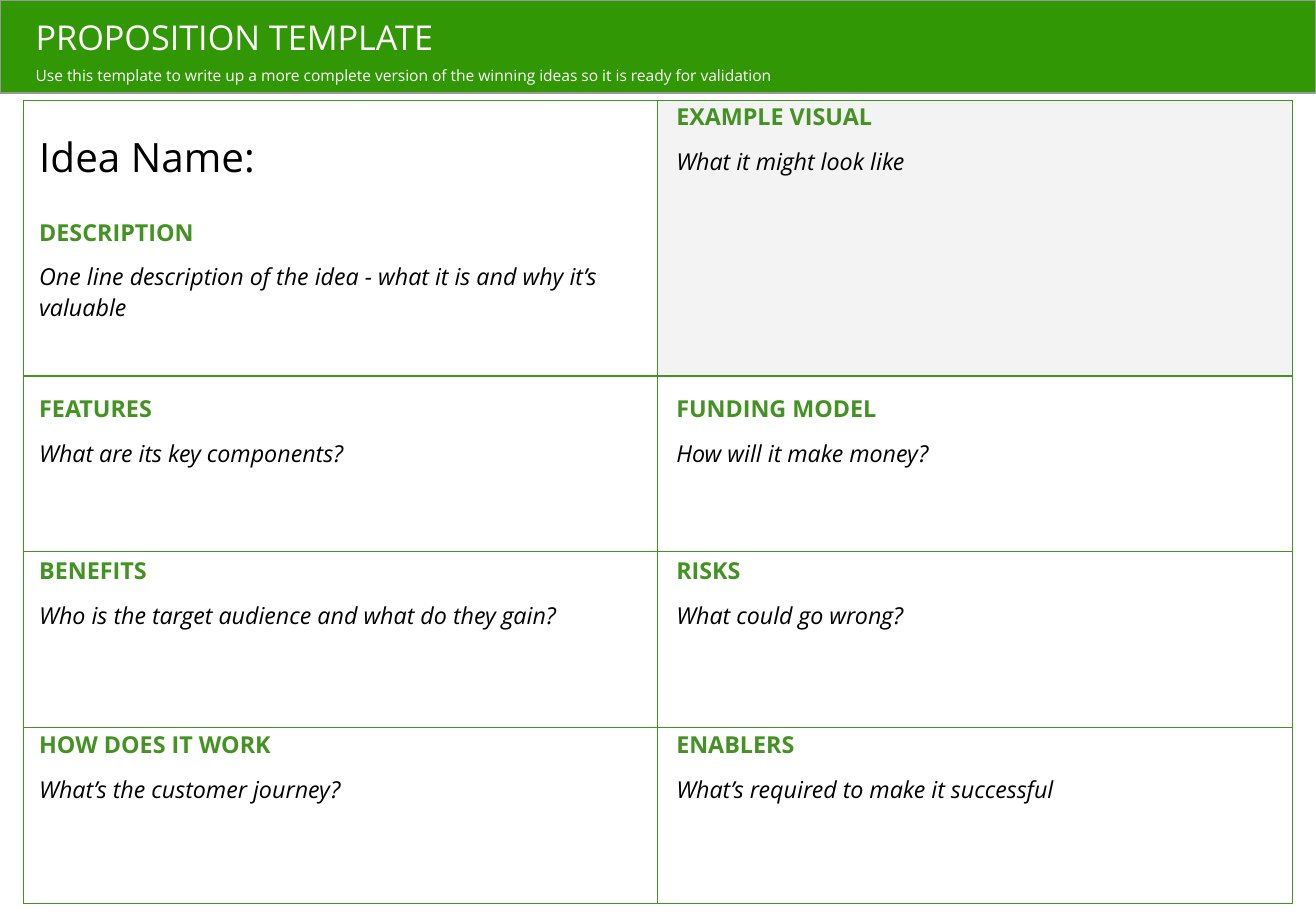
import pptx
import pptx.dml.color
import pptx.enum.shapes
import pptx.enum.text
import pptx.util
from pptx.util import Cm

GREEN, BANNER_GREEN = "449222", "319704"
BLACK, WHITE, PALE, GREY = "000000", "FFFFFF", "F3F3F3", "999999"


def rgb(hex_code):
    return pptx.dml.color.RGBColor.from_string(hex_code)


def write(paragraph, text, size=15, color=BLACK, bold=False, italic=False,
          spacing=1.1, before=0, after=0):
    """Put formatted text into a paragraph."""
    paragraph.alignment = pptx.enum.text.PP_ALIGN.LEFT
    paragraph.line_spacing = spacing
    paragraph.space_before = pptx.util.Pt(before)
    paragraph.space_after = pptx.util.Pt(after)
    run = paragraph.add_run()
    run.text = text
    run.font.name = "Open Sans"
    run.font.size = pptx.util.Pt(size)
    run.font.bold, run.font.italic = bold, italic
    run.font.color.rgb = rgb(color)


class PropositionSlide:
    def __init__(self, deck):
        self.slide = deck.slides.add_slide(deck.slide_layouts[5])

    def box(self, left, top, width, height, fill=None, line=GREEN):
        rect = self.slide.shapes.add_shape(
            pptx.enum.shapes.MSO_SHAPE.RECTANGLE,
            Cm(left), Cm(top), Cm(width), Cm(height))
        rect.shadow.inherit = False
        if fill:
            rect.fill.solid()
            rect.fill.fore_color.rgb = rgb(fill)
        else:
            rect.fill.background()
        rect.line.color.rgb = rgb(line)
        rect.line.width = pptx.util.Pt(0.75)

    def frame(self, holder, inset=0):
        frame = holder.text_frame
        frame.word_wrap = True
        frame.auto_size = pptx.enum.text.MSO_AUTO_SIZE.NONE
        frame.vertical_anchor = pptx.enum.text.MSO_ANCHOR.TOP
        frame.margin_left = frame.margin_right = Cm(inset)
        frame.margin_top = frame.margin_bottom = Cm(inset)
        return frame

    def text_box(self, left, top, width, height, inset=0):
        return self.frame(self.slide.shapes.add_textbox(
            Cm(left), Cm(top), Cm(width), Cm(height)), inset)

    def title(self, text, left, top, width, height):
        idea_name = self.slide.shapes.title
        idea_name.left, idea_name.top = Cm(left), Cm(top)
        idea_name.width, idea_name.height = Cm(width), Cm(height)
        write(self.frame(idea_name).paragraphs[0], text, size=26, spacing=0.9)

    def section(self, heading, prompt, left, top, width, height):
        section = self.text_box(left, top, width, height)
        write(section.paragraphs[0], heading, color=GREEN, bold=True, before=9)
        write(section.add_paragraph(), prompt, italic=True, before=9)


def main():
    deck = pptx.Presentation()
    deck.slide_width, deck.slide_height = Cm(29.85), Cm(20.96)
    page = PropositionSlide(deck)

    # Banner
    page.box(0, 0, 29.85, 2.11, fill=BANNER_GREEN, line=GREY)
    banner = page.text_box(0.53, 0.08, 20.88, 1.93, inset=0.28)
    write(banner.paragraphs[0], "PROPOSITION TEMPLATE", size=22, color=WHITE, spacing=1)
    write(banner.add_paragraph(),
          "Use this template to write up a more complete version of the "
          "winning ideas so it is ready for validation",
          size=10, color=WHITE, spacing=1.5, after=16)

    # Grid: a tall first row, then three equal rows
    left, top, column, first_row, row = 0.53, 2.29, 14.39, 6.24, 3.99
    page.box(left, top, column, first_row + 3 * row)
    page.box(left + column, top, column, first_row, fill=PALE)
    for i in range(3):
        for j in range(2):
            page.box(left + j * column, top + first_row + i * row, column, row)

    # Idea name and sections
    text_columns = (0.89, 15.34)
    page.title("Idea Name:", text_columns[0], 3.12, 13.26, 1.65)
    page.section("DESCRIPTION",
                 "One line description of the idea - what it is and why it’s valuable",
                 text_columns[0], 4.88, 12.8, 3.38)
    page.section("EXAMPLE VISUAL", "What it might look like",
                 text_columns[1], 2.26, 12.8, 3.38)
    section_rows = [
        (8.89, 12.09, 1.3,
         ("FEATURES", "What are its key components?"),
         ("FUNDING MODEL", "How will it make money?")),
        (12.55, 14.12, 1.6,
         ("BENEFITS", "Who is the target audience and what do they gain?"),
         ("RISKS", "What could go wrong?")),
        (16.51, 14.12, 1.6,
         ("HOW DOES IT WORK", "What’s the customer journey?"),
         ("ENABLERS", "What’s required to make it successful")),
    ]
    for text_top, width, height, *sections in section_rows:
        for text_left, (heading, prompt) in zip(text_columns, sections):
            page.section(heading, prompt, text_left, text_top, width, height)

    deck.save("out.pptx")


if __name__ == "__main__":
    main()
